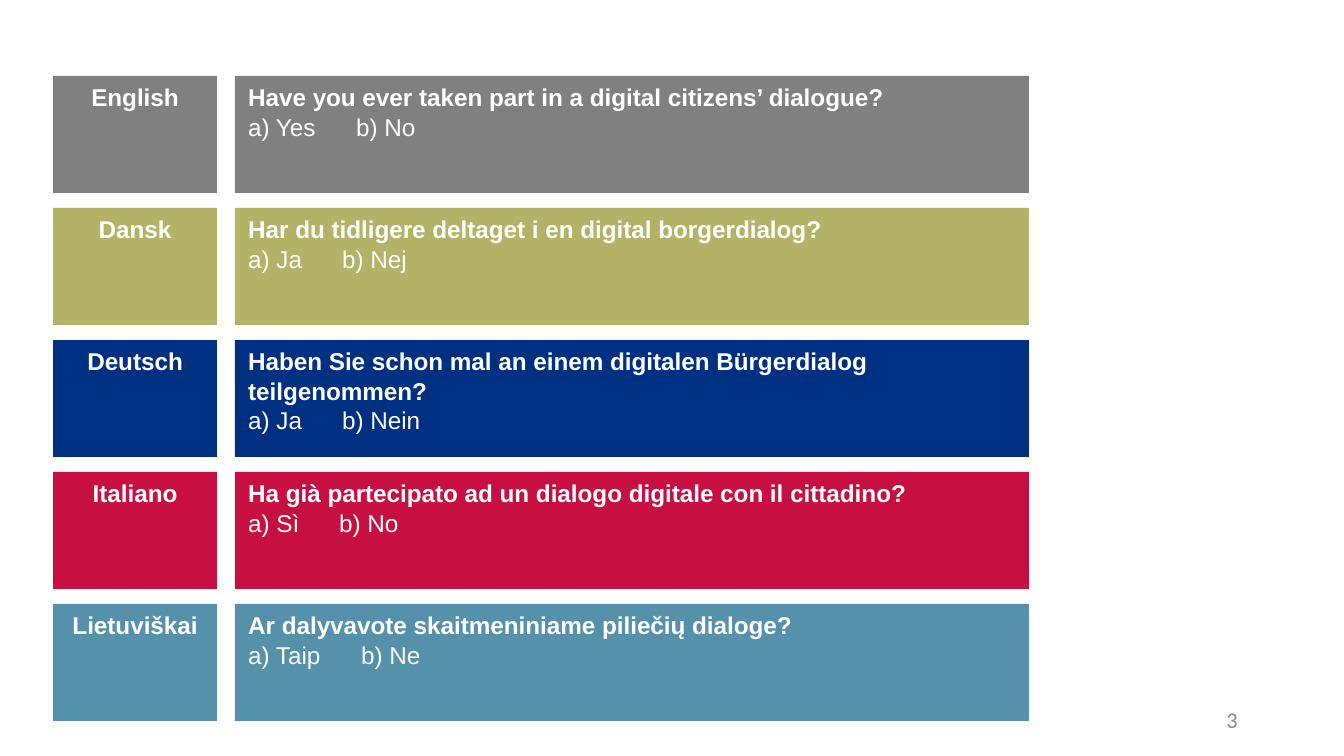
from dataclasses import dataclass

from lxml.etree import SubElement
from pptx import Presentation
from pptx.dml.color import RGBColor
from pptx.enum.shapes import MSO_SHAPE
from pptx.enum.text import MSO_ANCHOR, PP_ALIGN
from pptx.oxml.ns import qn
from pptx.util import Pt

# Content: language, question, answers, colour, offset of answer b in px
LANGUAGES = [
    ("English", "Have you ever taken part in a digital citizens’ dialogue?",
     ("a) Yes", "b) No"), "808080", 108),
    ("Dansk", "Har du tidligere deltaget i en digital borgerdialog?",
     ("a) Ja", "b) Nej"), "B4B266", 94),
    ("Deutsch", "Haben Sie schon mal an einem digitalen Bürgerdialog teilgenommen?",
     ("a) Ja", "b) Nein"), "003082", 94),
    ("Italiano", "Ha già partecipato ad un dialogo digitale con il cittadino?",
     ("a) Sì", "b) No"), "C80F41", 91),
    ("Lietuviškai", "Ar dalyvavote skaitmeniniame piliečių dialoge?",
     ("a) Taip", "b) Ne"), "5591AA", 113),
]
PAGE_NUMBER = "3"


@dataclass(frozen=True)
class Theme:
    body_font: str = "Arial"
    number_font: str = "Calibri"
    body_size: int = 13
    number_size: int = 12
    body_color: str = "FFFFFF"
    number_color: str = "8C8C8C"


THEME = Theme()

# Layout in px
SLIDE_WIDTH, SLIDE_HEIGHT = 1344, 756
FIRST_TOP, ROW_PITCH, ROW_HEIGHT = 76, 132, 117
NAME_LEFT, NAME_WIDTH = 53, 164
QUESTION_LEFT, QUESTION_WIDTH = 235, 794
NUMBER_AREA = (949, 700, 302, 40)


def px(length):
    return round(length * 914400 / 134.4)


def style(paragraph, font, size, color, bold=False, align=PP_ALIGN.LEFT):
    paragraph.alignment = align
    paragraph.font.name = font
    paragraph.font.size = Pt(size)
    paragraph.font.bold = bold
    paragraph.font.color.rgb = RGBColor.from_string(color)


def style_body(paragraph, **options):
    style(paragraph, THEME.body_font, THEME.body_size, THEME.body_color, **options)


def add_panel(slide, left, top, width, color):
    panel = slide.shapes.add_shape(
        MSO_SHAPE.RECTANGLE, px(left), px(top), px(width), px(ROW_HEIGHT))
    panel.shadow.inherit = False
    panel.fill.solid()
    panel.fill.fore_color.rgb = RGBColor.from_string(color)
    panel.line.fill.background()
    panel.text_frame.word_wrap = True
    panel.text_frame.vertical_anchor = MSO_ANCHOR.TOP
    return panel.text_frame


def add_tab_stop(paragraph, offset):
    properties = paragraph._p.get_or_add_pPr()
    stops = SubElement(properties, qn("a:tabLst"))
    SubElement(stops, qn("a:tab"), pos=str(px(offset)), algn="l")
    # Tab stops come before the default run properties
    properties.insert(properties.index(properties.find(qn("a:defRPr"))), stops)


prs = Presentation()
prs.slide_width, prs.slide_height = px(SLIDE_WIDTH), px(SLIDE_HEIGHT)
slide = prs.slides.add_slide(prs.slide_layouts[6])

# One row per language
for row, (language, question, answers, color, offset) in enumerate(LANGUAGES):
    top = FIRST_TOP + row * ROW_PITCH

    name = add_panel(slide, NAME_LEFT, top, NAME_WIDTH, color).paragraphs[0]
    name.text = language
    style_body(name, bold=True, align=PP_ALIGN.CENTER)

    poll = add_panel(slide, QUESTION_LEFT, top, QUESTION_WIDTH, color)
    poll.paragraphs[0].text = question
    style_body(poll.paragraphs[0], bold=True)
    choices = poll.add_paragraph()
    choices.text = "\t".join(answers)
    style_body(choices)
    add_tab_stop(choices, offset)

# Page number
number = slide.shapes.add_textbox(*map(px, NUMBER_AREA)).text_frame
number.word_wrap = True
number.vertical_anchor = MSO_ANCHOR.MIDDLE
number.paragraphs[0].text = PAGE_NUMBER
style(number.paragraphs[0], THEME.number_font, THEME.number_size,
      THEME.number_color, align=PP_ALIGN.RIGHT)

prs.save("out.pptx")
